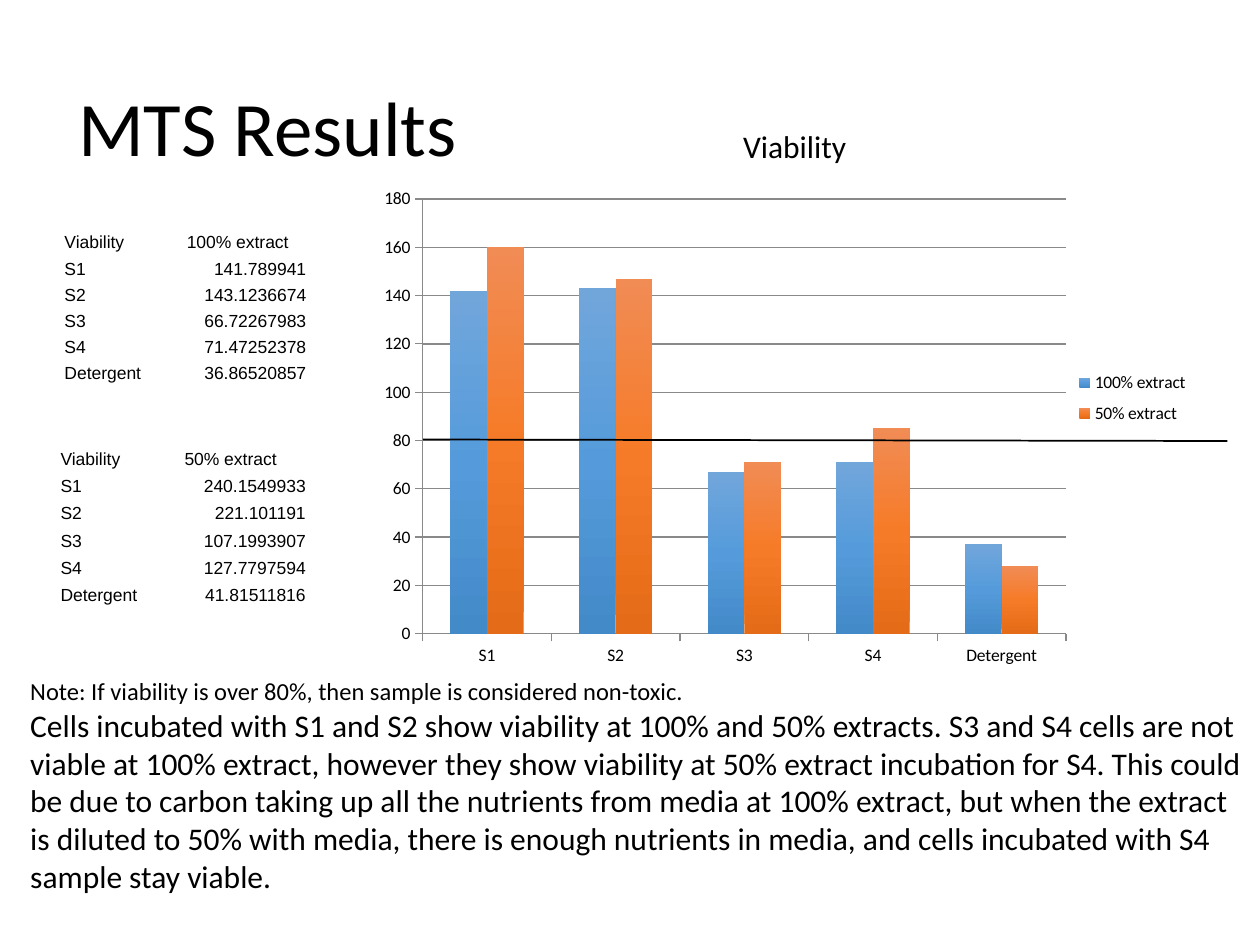
from copy import deepcopy
from typing import NamedTuple

from lxml import etree
from pptx import Presentation
from pptx.chart.data import CategoryChartData
from pptx.dml.color import RGBColor
from pptx.enum.chart import XL_CHART_TYPE, XL_LEGEND_POSITION, XL_TICK_MARK
from pptx.enum.shapes import MSO_CONNECTOR
from pptx.enum.text import MSO_ANCHOR, PP_ALIGN
from pptx.oxml.ns import qn
from pptx.util import Cm, Pt

COLUMN = XL_CHART_TYPE.COLUMN_CLUSTERED
LEGEND_RIGHT = XL_LEGEND_POSITION.RIGHT
TICK_OUT = XL_TICK_MARK.OUTSIDE
STRAIGHT = MSO_CONNECTOR.STRAIGHT
MIDDLE, BOTTOM = MSO_ANCHOR.MIDDLE, MSO_ANCHOR.BOTTOM
LEFT, RIGHT = PP_ALIGN.LEFT, PP_ALIGN.RIGHT

BLACK, GREY = "000000", "898989"
PLAIN_TABLE = "{2D5ABB26-0587-4C30-8999-92F81FD0307C}"
SAMPLES = ["S1", "S2", "S3", "S4", "Detergent"]


class Box(NamedTuple):
    left: float
    top: float
    width: float
    height: float

    def emu(self) -> list:
        return [Cm(v) for v in self]


class ViabilityTable(NamedTuple):
    box: Box
    extract: str
    values: list


class Series(NamedTuple):
    name: str
    values: list
    shades: tuple  # bottom, middle, top


CHART = Box(7.19, 3.43, 17.27, 10.46)
# Parts measured from the chart's corner
PLOT = Box(1.33, 0.58, 12.97, 8.77)
LEGEND = Box(14.39, 3.87, 2.5, 1.45)

TABLES = [
    ViabilityTable(Box(1.27, 4.57, 4.93, 3.15), "100% extract",
                   ["141.789941", "143.1236674", "66.72267983", "71.47252378", "36.86520857"]),
    ViabilityTable(Box(1.19, 8.92, 5, 3.28), "50% extract",
                   ["240.1549933", "221.101191", "107.1993907", "127.7797594", "41.81511816"]),
]
SERIES = [
    Series("100% extract", [142, 143, 67, 71, 37], ("438AC9", "559BDB", "71A6DB")),
    Series("50% extract", [160, 147, 71, 85, 28], ("E46B17", "F67B28", "F18C55")),
]
NOTES = [
    ("Note: If viability is over 80%, then sample is considered non-toxic.", 14),
    ("Cells incubated with S1 and S2 show viability at 100% and 50% extracts. "
     "S3 and S4 cells are not viable at 100% extract, however they show viability "
     "at 50% extract incubation for S4. This could be due to carbon taking up all "
     "the nutrients from media at 100% extract, but when the extract is diluted to "
     "50% with media, there is enough nutrients in media, and cells incubated with "
     "S4 sample stay viable.", 18),
]


def rgb(value: str) -> RGBColor:
    return RGBColor.from_string(value)


def set_font(font, size: float, name: str = "Calibri") -> None:
    font.size, font.name = Pt(size), name
    font.color.rgb = rgb(BLACK)


def add_run(p, text: str, size: float, name: str = "Calibri") -> None:
    r = p.add_run()
    r.text = text
    set_font(r.font, size, name)


def add_text(s, box: Box, lines: list) -> None:
    tf = s.shapes.add_textbox(*box.emu()).text_frame
    tf.word_wrap = True
    for i, (text, size) in enumerate(lines):
        p = tf.add_paragraph() if i else tf.paragraphs[0]
        add_run(p, text, size)


def add_viability_table(s, item: ViabilityTable) -> None:
    rows = [("Viability", item.extract), *zip(SAMPLES, item.values)]
    table = s.shapes.add_table(len(rows), 2, *item.box.emu()).table
    table.first_row = table.horz_banding = False
    table._tbl.tblPr.find(qn("a:tableStyleId")).text = PLAIN_TABLE
    for i, row in enumerate(rows):
        table.rows[i].height = Cm(item.box.height / len(rows))
        for j, text in enumerate(row):
            cell = table.cell(i, j)
            cell.fill.background()
            cell.vertical_anchor = BOTTOM
            cell.margin_left = cell.margin_right = cell.margin_top = Cm(0.03)
            cell.margin_bottom = 0
            p = cell.text_frame.paragraphs[0]
            p.alignment = RIGHT if i and j else LEFT
            add_run(p, text, 10, "Arial")


def shade_bars(ser, shades: tuple) -> None:
    """Fill upwards through three shades."""
    bottom, middle, top = shades
    fill = ser.format.fill
    fill.gradient()
    fill.gradient_angle = 90
    first, last = fill.gradient_stops
    first.color.rgb = rgb(middle)
    stops = next(ser._element.iter(qn("a:gsLst")))
    halfway = deepcopy(stops[0])
    halfway.set("pos", "50000")
    stops.insert(1, halfway)
    first.color.rgb, last.color.rgb = rgb(bottom), rgb(top)


def place_part(part, index: int, box: Box, **target: str) -> None:
    """Fix a chart part's place, as fractions of the chart."""
    for old in part.findall(qn("c:layout")):
        part.remove(old)
    layout = etree.Element(qn("c:layout"))
    part.insert(index, layout)
    manual = etree.SubElement(layout, qn("c:manualLayout"))
    settings = dict(target, xMode="edge", yMode="edge",
                    x=box.left / CHART.width, y=box.top / CHART.height,
                    w=box.width / CHART.width, h=box.height / CHART.height)
    for tag, value in settings.items():
        etree.SubElement(manual, qn(f"c:{tag}")).set("val", str(value))


def add_viability_chart(s) -> None:
    data = CategoryChartData()
    data.categories = SAMPLES
    for item in SERIES:
        data.add_series(item.name, item.values)
    chart = s.shapes.add_chart(COLUMN, *CHART.emu(), data).chart
    chart.has_title = False
    set_font(chart.font, 10)
    chart.has_legend = True
    chart.legend.position = LEGEND_RIGHT
    chart.legend.include_in_layout = False
    place_part(chart._chartSpace.chart.plotArea, 0, PLOT, layoutTarget="inner")
    place_part(chart.legend._element, 1, LEGEND)

    plot = chart.plots[0]
    plot.gap_width, plot.overlap = 150, 0
    plot.vary_by_categories = False
    for ser, item in zip(plot.series, SERIES):
        shade_bars(ser, item.shades)

    value_axis = chart.value_axis
    value_axis.minimum_scale, value_axis.maximum_scale = 0, 180
    value_axis.major_unit = 20
    value_axis.has_major_gridlines = True
    for axis in (chart.category_axis, value_axis):
        axis.major_tick_mark = TICK_OUT
    for part in (chart.category_axis, value_axis, value_axis.major_gridlines):
        part.format.line.color.rgb = rgb(GREY)
        part.format.line.width = Pt(0.75)


def add_threshold(s, x1: float, y1: float, x2: float, y2: float) -> None:
    line = s.shapes.add_connector(STRAIGHT, Cm(x1), Cm(y1), Cm(x2), Cm(y2))
    line.line.color.rgb = rgb(BLACK)
    line.line.width = Pt(1)
    etree.SubElement(line._element.spPr, qn("a:effectLst"))


def main() -> None:
    prs = Presentation()
    prs.slide_width, prs.slide_height = Cm(25.4), Cm(19.05)
    s = prs.slides.add_slide(prs.slide_layouts[5])

    # Title
    title = s.shapes.title
    title.left, title.top, title.width, title.height = Box(1.32, 0.81, 21.59, 3.68).emu()
    tf = title.text_frame
    tf.vertical_anchor = MIDDLE
    p = tf.paragraphs[0]
    p.alignment, p.line_spacing = LEFT, 0.9
    add_run(p, "MTS Results", 44)

    # Measured values
    for item in TABLES:
        add_viability_table(s, item)

    # Chart with its heading
    add_viability_chart(s)
    add_text(s, Box(14.73, 2.44, 3.23, 1.02), [("Viability", 18)])

    # Conclusions and the 80% limit
    add_text(s, Box(0.36, 13.51, 25.04, 4.7), NOTES)
    add_threshold(s, 8.53, 8.86, 24.74, 8.89)

    prs.save("out.pptx")


if __name__ == "__main__":
    main()
